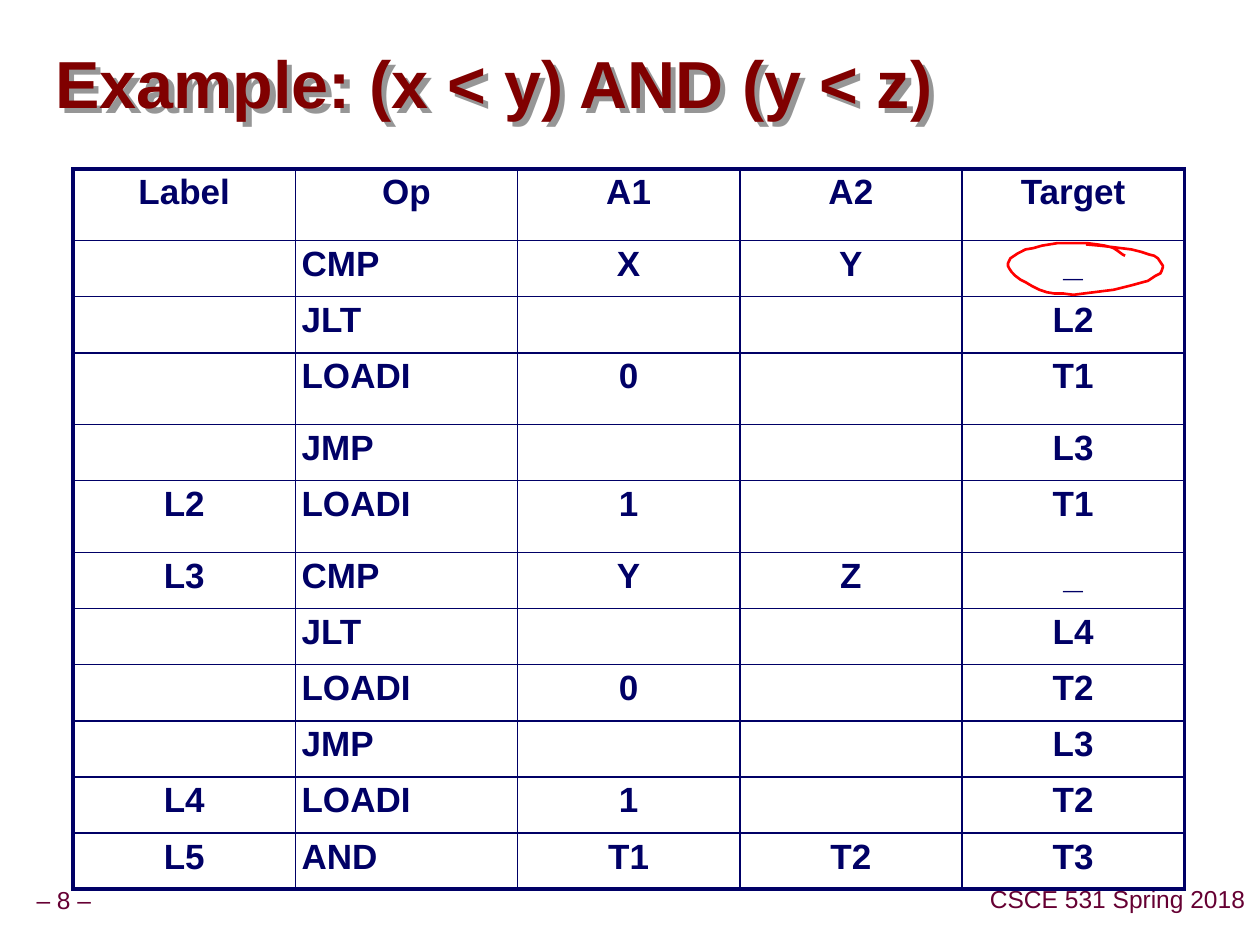
import pptx
import pptx.dml.color
import pptx.enum.text
import pptx.oxml
import pptx.util
from pptx.util import Inches

NAMESPACE = 'xmlns:a="http://schemas.openxmlformats.org/drawingml/2006/main"'
NAVY, MAROON, PLUM, RED, GRAY = "000066", "800000", "660033", "FF0000", "969696"
LEFT, CENTER = pptx.enum.text.PP_ALIGN.LEFT, pptx.enum.text.PP_ALIGN.CENTER
MIDDLE = pptx.enum.text.MSO_ANCHOR.MIDDLE

# Content
TITLE = "Example: (x < y) AND (y < z)"
FOOTERS = [  # text, box, wrap, alignment
    ("– 8 –", (0.24, 7, 0.66, 0.31), True, LEFT),
    ("CSCE 531 Spring 2018", (7.8, 6.99, 2.14, 0.31), False, CENTER),
]
QUADRUPLES = [
    ("Label", "Op", "A1", "A2", "Target"),
    ("", "CMP", "X", "Y", "_"),
    ("", "JLT", "", "", "L2"),
    ("", "LOADI", "0", "", "T1"),
    ("", "JMP", "", "", "L3"),
    ("L2", "LOADI", "1", "", "T1"),
    ("L3", "CMP", "Y", "Z", "_"),
    ("", "JLT", "", "", "L4"),
    ("", "LOADI", "0", "", "T2"),
    ("", "JMP", "", "", "L3"),
    ("L4", "LOADI", "1", "", "T2"),
    ("L5", "AND", "T1", "T2", "T3"),
]
TABLE_BOX = (0.58, 1.34, 8.82, 5.72)
TALL_ROWS, TALL = {0, 3, 5}, 0.57
# Hand-drawn ring around the first target, in inches
RING = [
    (8.93, 2.03), (8.91, 2.02), (8.87, 1.99), (8.84, 1.97), (8.81, 1.96),
    (8.77, 1.95), (8.71, 1.94), (8.63, 1.93), (8.55, 1.93), (8.45, 1.93),
    (8.39, 1.93), (8.33, 1.94), (8.27, 1.95), (8.2, 1.97), (8.14, 1.98),
    (8.08, 2.01), (8.05, 2.03), (8.02, 2.05), (8.01, 2.07), (8, 2.09),
    (8, 2.11), (8.01, 2.13), (8.03, 2.16), (8.06, 2.19), (8.1, 2.22),
    (8.14, 2.24), (8.19, 2.27), (8.25, 2.3), (8.31, 2.32), (8.37, 2.33),
    (8.44, 2.33), (8.52, 2.34), (8.6, 2.33), (8.68, 2.32), (8.76, 2.31),
    (8.84, 2.3), (8.92, 2.28), (9, 2.26), (9.07, 2.24), (9.11, 2.23),
    (9.14, 2.21), (9.17, 2.19), (9.21, 2.17), (9.22, 2.15), (9.23, 2.12),
    (9.23, 2.11), (9.21, 2.08), (9.19, 2.05), (9.16, 2.03), (9.12, 2.02),
    (9.06, 2), (8.98, 1.98), (8.9, 1.97), (8.82, 1.96), (8.73, 1.95),
    (8.62, 1.94),
]


def color(value):
    return pptx.dml.color.RGBColor.from_string(value)


def write(text_frame, text, size, text_color, bold, alignment, spacing):
    paragraph = text_frame.paragraphs[0]
    paragraph.alignment = alignment
    paragraph.line_spacing = spacing
    run = paragraph.add_run()
    run.text = text
    formats = {"name": "Arial", "size": pptx.util.Pt(size), "bold": bold}
    for name, value in formats.items():
        setattr(run.font, name, value)
    run.font.color.rgb = color(text_color)


def add_text_box(slide, box, margin, wrap):
    shape = slide.shapes.add_textbox(*map(Inches, box))
    formats = {"word_wrap": wrap, "vertical_anchor": MIDDLE}
    for side in ("left", "top", "right", "bottom"):
        formats[f"margin_{side}"] = Inches(margin)
    for name, value in formats.items():
        setattr(shape.text_frame, name, value)
    return shape


def set_border(cell, side, width):
    cell._tc.get_or_add_tcPr().append(pptx.oxml.parse_xml(
        f'<a:ln{side} {NAMESPACE} w="{pptx.util.Pt(width)}"><a:solidFill>'
        f'<a:srgbClr val="{NAVY}"/></a:solidFill></a:ln{side}>'))


presentation = pptx.Presentation()
presentation.slide_width, presentation.slide_height = Inches(10), Inches(7.5)
slide = presentation.slides.add_slide(presentation.slide_layouts[6])

# Footers
for text, box, wrap, alignment in FOOTERS:
    footer = add_text_box(slide, box, 0.05, wrap)
    write(footer.text_frame, text, 14, PLUM, False, alignment, 0.9)

# Title: an unfilled box, so its shadow falls from the letters
title = add_text_box(slide, (0.44, 0.27, 9.53, 0.85), 0, True)
write(title.text_frame, TITLE, 38, MAROON, True, LEFT, 0.87)
title._element.spPr.append(pptx.oxml.parse_xml(
    f'<a:effectLst {NAMESPACE}><a:outerShdw dist="53882" dir="2700000" algn="ctr" '
    f'rotWithShape="0"><a:srgbClr val="{GRAY}"/></a:outerShdw></a:effectLst>'))

# Table of quadruples
last_row, last_column = len(QUADRUPLES) - 1, len(QUADRUPLES[0]) - 1
short = (TABLE_BOX[3] - TALL * len(TALL_ROWS)) / (len(QUADRUPLES) - len(TALL_ROWS))
table = slide.shapes.add_table(
    last_row + 1, last_column + 1, *map(Inches, TABLE_BOX)).table
table.first_row = table.horz_banding = False
for row, texts in enumerate(QUADRUPLES):
    table.rows[row].height = Inches(TALL if row in TALL_ROWS else short)
    for column, text in enumerate(texts):
        cell = table.cell(row, column)
        outer_sides = {"L": column == 0, "R": column == last_column,
                       "T": row == 0, "B": row == last_row}
        for side, outer in outer_sides.items():
            set_border(cell, side, 2.25 if outer else 1)
        cell.fill.background()
        for side in ("left", "top", "right", "bottom"):
            setattr(cell, f"margin_{side}", Inches(0.05))
        if text:
            alignment = LEFT if column == 1 and row else CENTER
            write(cell.text_frame, text, 20, NAVY, True, alignment, 0.95)

# Ring, in whole hundredths of an inch
points = [(round(x * 100), round(y * 100)) for x, y in RING]
builder = slide.shapes.build_freeform(*points[0], scale=Inches(0.01))
builder.add_line_segments(points[1:], close=False)
ring = builder.convert_to_shape()
ring.shadow.inherit = False
ring.fill.background()
ring.line.color.rgb = color(RED)
ring.line.width = pptx.util.Pt(1.5)

presentation.save("out.pptx")
